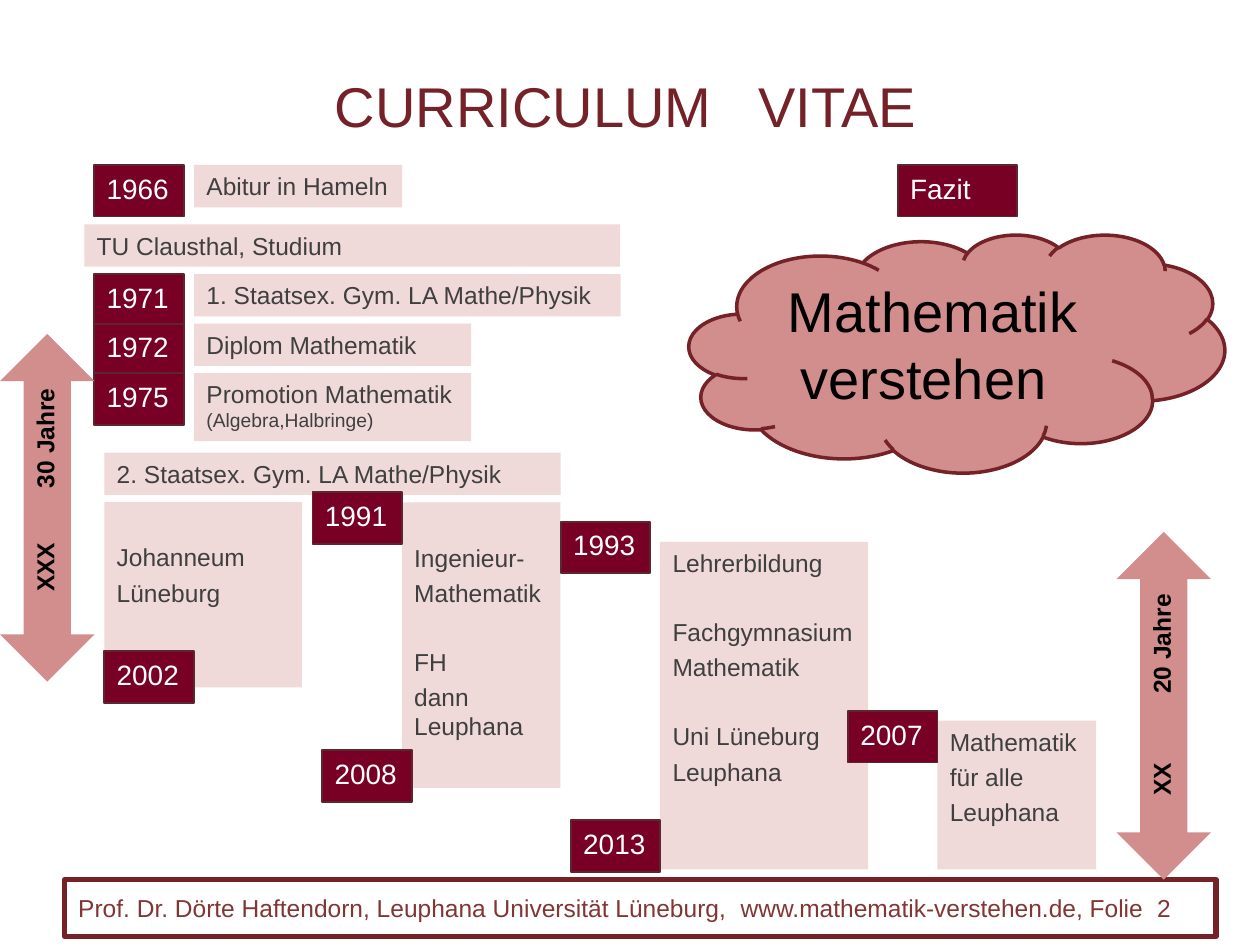
from dataclasses import dataclass

from lxml import etree
from pptx import Presentation
from pptx import util as u
from pptx.dml.color import RGBColor
from pptx.enum import shapes, text
from pptx.oxml import ns

Pt = u.Pt
Kind = shapes.MSO_SHAPE

WINE = RGBColor(0x77, 0x00, 0x24)
WINE_EDGE = RGBColor(0x5C, 0x26, 0x30)
MAROON = RGBColor(0x74, 0x21, 0x28)
BRICK = RGBColor(0x82, 0x36, 0x34)
ROSE = RGBColor(0xD2, 0x8E, 0x8C)
BLUSH = RGBColor(0xF0, 0xD9, 0xD9)
GREY = RGBColor(0x3F, 0x3F, 0x3F)
BLACK = RGBColor(0, 0, 0)
WHITE = RGBColor(0xFF, 0xFF, 0xFF)

FONT = "Arial"
TAG_WIDTH, TAG_HEIGHT = 51.2, 29.5
LINE_GAP, GROUP_GAP = 3.3, 22.7
TOP_INSET, LOW_START = 3.6, 23


@dataclass(frozen=True)
class Tag:
    label: str
    left: float
    top: float
    width: float = TAG_WIDTH


@dataclass(frozen=True)
class Panel:
    left: float
    top: float
    width: float
    height: float
    groups: tuple[tuple[str, ...], ...]
    inset: float = TOP_INSET
    detail: str = ""


@dataclass(frozen=True)
class Span:
    left: float
    top: float
    marks: str
    years: str
    stops: tuple[float, float]


PANELS = [
    Panel(110.9, 94.3, 119, 24.2, (("Abitur in Hameln",),)),
    Panel(48.2, 128.2, 306, 24.2, (("TU Clausthal, Studium",),)),
    Panel(110.9, 156.7, 243.8, 24.2, (("1. Staatsex. Gym. LA Mathe/Physik",),)),
    Panel(110.9, 185, 158.4, 24.2, (("Diplom Mathematik",),)),
    Panel(110.9, 213.2, 158.4, 38.9, (("Promotion Mathematik ",),),
          detail="(Algebra,Halbringe)"),
    Panel(59.6, 258.7, 260.7, 24.2, (("2. Staatsex. Gym. LA Mathe/Physik",),)),
    Panel(59.6, 287, 113, 105.8, (("Johanneum", "Lüneburg"),), LOW_START),
    Panel(229.6, 287, 90.7, 163.3,
          (("Ingenieur-", "Mathematik"), ("FH", "dann Leuphana")), LOW_START),
    Panel(377.2, 309.6, 118.9, 187.2,
          (("Lehrerbildung",), ("Fachgymnasium", "Mathematik"),
           ("Uni Lüneburg", "Leuphana"))),
    Panel(535.7, 411.8, 90.7, 85,
          (("Mathematik", "für alle", "Leuphana"),)),
]

TAGS = [
    Tag("Fazit", 513, 94.3, 68),
    Tag("1966", 53.8, 94.3),
    Tag("1971", 53.8, 156.7),
    Tag("1972", 53.8, 185),
    Tag("1975", 53.8, 213.2),
    Tag("2002", 59.6, 372.2),
    Tag("1991", 178.6, 281.3),
    Tag("2008", 184.1, 428.6),
    Tag("2013", 326.2, 468.7),
    Tag("1993", 320.4, 298.1),
    Tag("2007", 484.6, 406.2),
]

SPANS = [
    Span(0, 190.8, "XXX", "30 Jahre", (30.6, 90)),
    Span(638, 304, "XX", "20 Jahre", (27.2, 85.5)),
]


def add_span(para, words: str, size: float, color: RGBColor,
             bold: bool = False, tracking: float = 0) -> None:
    span = para.add_run()
    span.text = words
    span.font.name, span.font.size = FONT, Pt(size)
    span.font.color.rgb, span.font.bold = color, bold
    if tracking:
        span._r.get_or_add_rPr().set("spc", str(round(tracking * 100)))


def add_box(page, kind, left: float, top: float, width: float, height: float,
            fill=None, line=None, weight: float = 1):
    box = page.shapes.add_shape(kind, Pt(left), Pt(top), Pt(width), Pt(height))
    box.shadow.inherit = False
    if fill is None:
        box.fill.background()
    else:
        box.fill.solid()
        box.fill.fore_color.rgb = fill
    if line is None:
        box.line.fill.background()
    else:
        box.line.color.rgb = line
        box.line.width = Pt(weight)
    frame = box.text_frame
    frame.word_wrap = True
    frame.vertical_anchor = text.MSO_ANCHOR.TOP
    frame.paragraphs[0].alignment = text.PP_ALIGN.LEFT
    return box


def draw_panel(page, panel: Panel) -> None:
    box = add_box(page, Kind.RECTANGLE, panel.left, panel.top,
                  panel.width, panel.height, BLUSH)
    frame = box.text_frame
    frame.margin_top = Pt(panel.inset)
    para = None
    for group in panel.groups:
        for index, words in enumerate(group):
            if para is None:
                para = frame.paragraphs[0]
            else:
                para = frame.add_paragraph()
                para.alignment = text.PP_ALIGN.LEFT
                para.space_before = Pt(LINE_GAP if index else GROUP_GAP)
            add_span(para, words, 14, GREY)
    if panel.detail:
        add_span(para, panel.detail, 11, GREY)


def draw_tag(page, tag: Tag) -> None:
    box = add_box(page, Kind.RECTANGLE, tag.left, tag.top, tag.width,
                  TAG_HEIGHT, WINE, WINE_EDGE)
    add_span(box.text_frame.paragraphs[0], tag.label, 16, WHITE)


def draw_time_span(page, span: Span) -> None:
    box = add_box(page, Kind.UP_DOWN_ARROW, span.left, span.top, 54, 198.7, ROSE)
    box.text_frame._txBody.bodyPr.set("vert", "vert270")
    para = box.text_frame.paragraphs[0]
    tabs = etree.SubElement(para._p.get_or_add_pPr(), ns.qn("a:tabLst"))
    for stop in span.stops:
        etree.SubElement(tabs, ns.qn("a:tab"), pos=str(Pt(stop)), algn="l")
    add_span(para, f"\t{span.marks}\t{span.years}", 14, BLACK, bold=True)


def draw_title(page) -> None:
    box = page.shapes.add_textbox(Pt(14.4), Pt(37.4), Pt(686.2), Pt(46))
    box.text_frame.word_wrap = True
    para = box.text_frame.paragraphs[0]
    para.alignment = text.PP_ALIGN.CENTER
    add_span(para, "CURRICULUM", 32, MAROON)
    add_span(para, " ", 32, MAROON, tracking=17.8)
    add_span(para, "VITAE", 32, MAROON)


def draw_cloud(page) -> None:
    box = add_box(page, Kind.CLOUD, 393.8, 133.9, 306, 136, ROSE, MAROON, 2)
    para = box.text_frame.paragraphs[0]
    indents = para._p.get_or_add_pPr()
    indents.set("marL", str(Pt(14.4)))
    indents.set("indent", str(Pt(-7.2)))
    add_span(para, "Mathematik verstehen", 32, BLACK)


def draw_footer(page) -> None:
    box = add_box(page, Kind.RECTANGLE, 36.9, 502.6, 658, 32.6, None, MAROON, 3)
    frame = box.text_frame
    frame.margin_left = Pt(7.8)
    frame.margin_top = frame.margin_right = frame.margin_bottom = 0
    frame.vertical_anchor = text.MSO_ANCHOR.MIDDLE
    para = frame.paragraphs[0]
    add_span(para, "Prof. Dr. Dörte Haftendorn, Leuphana Universität Lüneburg,", 14, BRICK)
    for words in ("www.mathematik-verstehen.de, Folie", "2"):
        add_span(para, " ", 14, BRICK, tracking=3.9)
        add_span(para, words, 14, BRICK)


def main() -> None:
    deck = Presentation()
    deck.slide_width, deck.slide_height = Pt(720), Pt(540)
    page = deck.slides.add_slide(deck.slide_layouts[6])

    # Title and footer
    draw_title(page)
    draw_footer(page)
    # Stations and their years
    for panel in PANELS:
        draw_panel(page, panel)
    for tag in TAGS:
        draw_tag(page, tag)
    # Time spans and conclusion
    for span in SPANS:
        draw_time_span(page, span)
    draw_cloud(page)

    deck.save("out.pptx")


if __name__ == "__main__":
    main()
